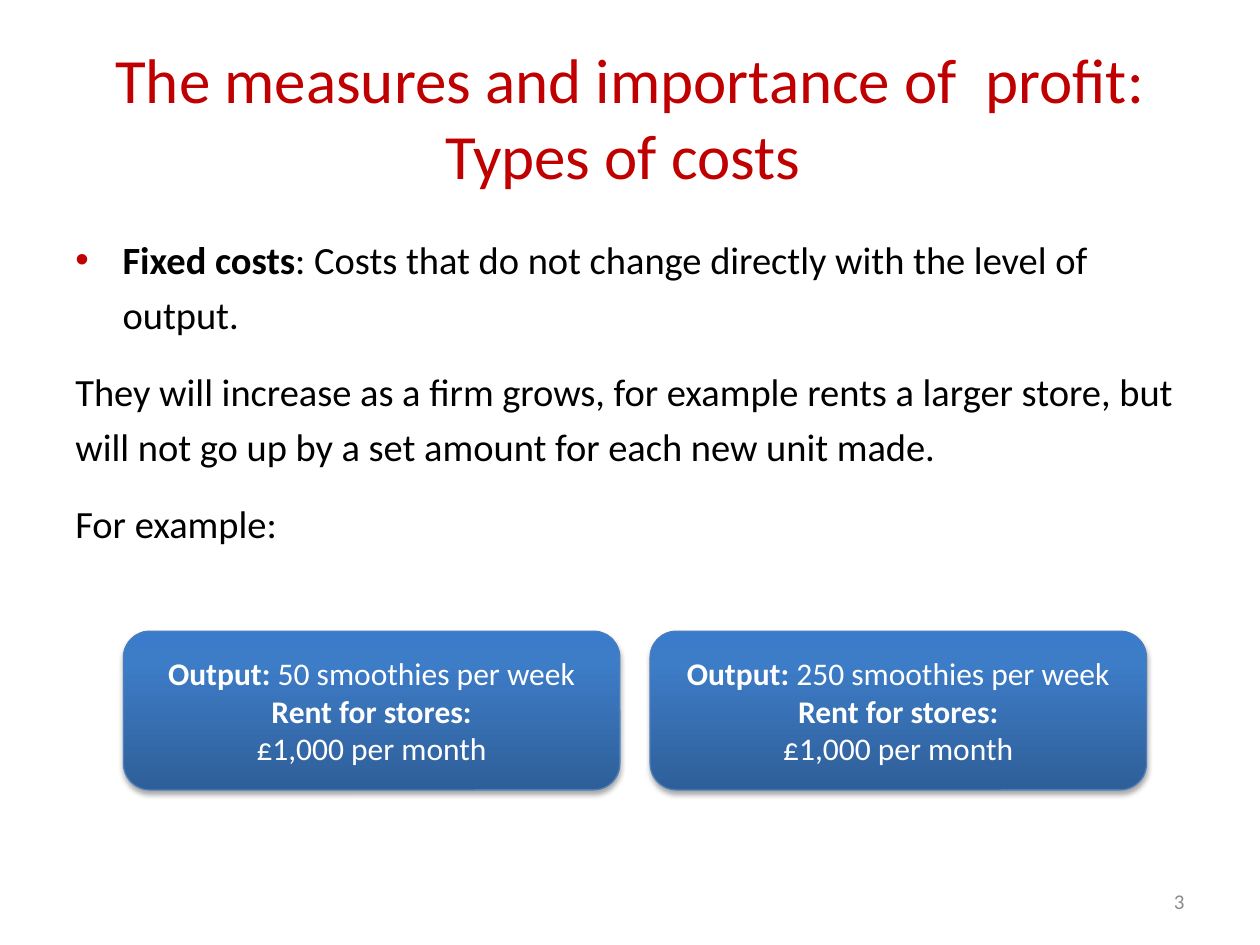
from dataclasses import dataclass

import lxml.etree
import pptx
import pptx.dml.color
import pptx.enum.shapes
import pptx.enum.text
import pptx.oxml
import pptx.oxml.ns
import pptx.util

Pt = pptx.util.Pt
ALIGN = pptx.enum.text.PP_ALIGN
ANCHOR = pptx.enum.text.MSO_ANCHOR
NS = 'xmlns:a="http://schemas.openxmlformats.org/drawingml/2006/main"'
CELL = pptx.util.Inches(0.1)  # the slide is 100 columns by 75 rows

COLORS = {
    "red": "C00000", "black": "000000", "white": "FFFFFF", "gray": "8C8C8C",
    "edge": "4B7EBC", "deep": "2F5F99", "mid": "3D7CC7", "top": "3A7CCB",
}


@dataclass
class Area:
    col: float
    row: float
    cols: float
    rows: float

    def emu(self) -> list[int]:
        return [round(n * CELL) for n in (self.col, self.row, self.cols, self.rows)]


@dataclass
class Style:
    size: int
    color: str
    align: ALIGN = ALIGN.LEFT
    anchor: ANCHOR = ANCHOR.MIDDLE


@dataclass
class Card:
    col: float
    lead: str
    rest: str


Line = list[tuple[str, bool]]  # pieces of text, each bold or not


def rgb(name: str) -> pptx.dml.color.RGBColor:
    return pptx.dml.color.RGBColor.from_string(COLORS[name])


def write(shape, style: Style, lines: list[Line], form: dict | None = None) -> None:
    """Fill a shape with lines; "\\n" inside a piece is a soft break."""
    frame = shape.text_frame
    frame.word_wrap = True
    frame.vertical_anchor = style.anchor
    for i, line in enumerate(lines):
        para = frame.add_paragraph() if i else frame.paragraphs[0]
        for key, val in {"alignment": style.align, **(form or {})}.items():
            setattr(para, key, val)
        for text, bold in line:
            for j, part in enumerate(text.split("\n")):
                if j:
                    para.add_line_break()
                run = para.add_run()
                run.text = part
                looks = {"name": "Calibri", "size": Pt(style.size), "bold": bold}
                for key, val in looks.items():
                    setattr(run.font, key, val)
                run.font.color.rgb = rgb(style.color)


def add_text(slide, area: Area, style: Style, lines: list[Line], form: dict | None = None):
    box = slide.shapes.add_textbox(*area.emu())
    write(box, style, lines, form)
    return box


def add_bullet(para, color: str, indent: float) -> None:
    props = para._p.get_or_add_pPr()
    wide = round(indent * CELL)
    props.set("marL", str(wide))
    props.set("indent", str(-wide))
    for xml in (
        f'<a:buClr {NS}><a:srgbClr val="{COLORS[color]}"/></a:buClr>',
        f'<a:buFont {NS} typeface="Arial"/>',
        f'<a:buChar {NS} char="•"/>',
    ):
        props.append(pptx.oxml.parse_xml(xml))


def shade(shape) -> None:
    """Give a card its three-stop gradient and soft shadow."""
    fill = shape.fill
    fill.gradient()
    fill.gradient_angle = 90  # counted anticlockwise: dark foot, light head
    stops = fill._fill._gradFill.find(pptx.oxml.ns.qn("a:gsLst"))
    for old in list(stops):
        stops.remove(old)
    for pos, name in ((0, "deep"), (80, "mid"), (100, "top")):
        stops.append(pptx.oxml.parse_xml(
            f'<a:gs {NS} pos="{pos * 1000}"><a:srgbClr val="{COLORS[name]}"/></a:gs>'))
    shape.line.color.rgb = rgb("edge")
    shape.line.width = Pt(0.75)
    shape.shadow.inherit = False
    effects = shape._element.spPr.find(pptx.oxml.ns.qn("a:effectLst"))
    effects.append(pptx.oxml.parse_xml(
        f'<a:outerShdw {NS} blurRad="{Pt(3.1)}" dist="{Pt(1.8)}" dir="5400000"'
        f' rotWithShape="0"><a:srgbClr val="{COLORS["black"]}">'
        '<a:alpha val="35000"/></a:srgbClr></a:outerShdw>'))


def add_card(slide, card: Card) -> None:
    area = Area(card.col, 50.1, 39.4, 12.6)
    kind = pptx.enum.shapes.MSO_SHAPE.ROUNDED_RECTANGLE
    shape = slide.shapes.add_shape(kind, *area.emu())
    shade(shape)
    write(shape, Style(18, "white", ALIGN.CENTER), [
        [(card.lead, True), (card.rest, False)],
        [("Rent for stores:", True)],
        [("£1,000 per month", False)],
    ])


def main() -> None:
    deck = pptx.Presentation()
    deck.slide_width, deck.slide_height = 100 * CELL, 75 * CELL
    slide = deck.slides.add_slide(deck.slide_layouts[6])

    add_text(slide, Area(5, 3, 90, 12.5), Style(36, "red", ALIGN.CENTER),
             [[("The measures and importance of  profit:\nTypes of costs ", False)]])
    body = add_text(
        slide, Area(5, 17.5, 90, 49.5), Style(22, "black", anchor=ANCHOR.TOP),
        [
            [("Fixed costs", True),
             (": Costs that do not change directly with the level of output.", False)],
            [("They will increase as a firm grows, for example rents a larger store, "
              "but will not go up by a set amount for each new unit made.", False)],
            [("For example:", False)],
        ],
        {"line_spacing": 1.2, "space_after": Pt(12)})
    add_bullet(body.text_frame.paragraphs[0], "red", 3.75)
    add_text(slide, Area(71.7, 69.5, 23.3, 4), Style(12, "gray", ALIGN.RIGHT),
             [[("3", False)]])

    for card in (Card(9.8, "Output: ", "50 smoothies per week"),
                 Card(51.6, "Output:", " 250 smoothies per week")):
        add_card(slide, card)
    deck.save("out.pptx")


if __name__ == "__main__":
    main()
